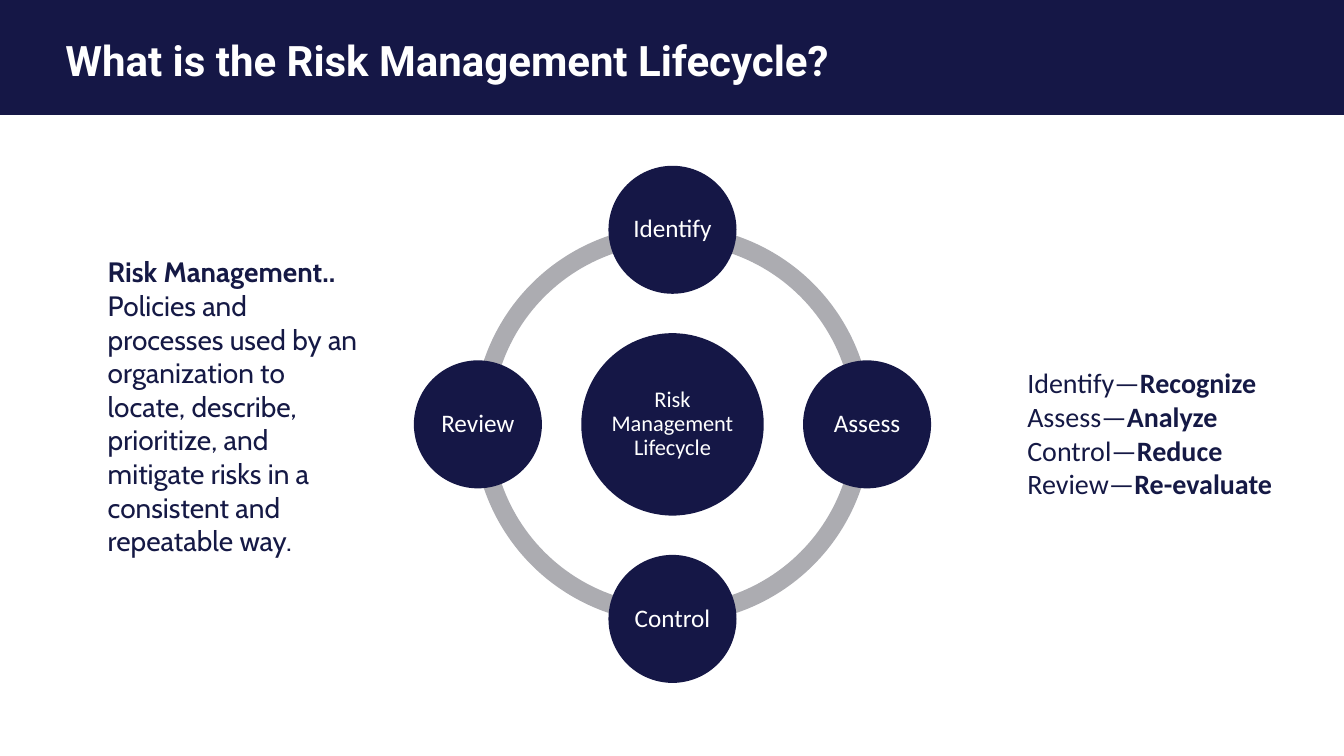
from dataclasses import dataclass
from math import cos, radians, sin

from pptx import Presentation
from pptx.dml.color import RGBColor
from pptx.enum.shapes import MSO_SHAPE
from pptx.enum.text import MSO_ANCHOR, PP_ALIGN
from pptx.util import Inches, Pt

RECTANGLE, OVAL, ARC = MSO_SHAPE.RECTANGLE, MSO_SHAPE.OVAL, MSO_SHAPE.BLOCK_ARC
MIDDLE, TOP = MSO_ANCHOR.MIDDLE, MSO_ANCHOR.TOP
LEFT, CENTER = PP_ALIGN.LEFT, PP_ALIGN.CENTER


@dataclass(frozen=True)
class Theme:
    navy: str = "151746"
    ink: str = "151945"
    gray: str = "ACACB1"
    white: str = "FFFFFF"
    title_size: int = 30
    body_size: int = 20
    step_size: int = 18
    hub_size: int = 16


theme = Theme()
deck = Presentation()
deck.slide_width, deck.slide_height = Inches(13.33), Inches(7.5)
page = deck.slides.add_slide(deck.slide_layouts[6])


def add_block(kind, left, top, width, height, color):
    block = page.shapes.add_shape(
        kind, Inches(left), Inches(top), Inches(width), Inches(height))
    block.shadow.inherit = False
    block.fill.solid()
    block.fill.fore_color.rgb = RGBColor.from_string(color)
    block.line.fill.background()
    return block


def write(box, paragraphs, *, font, size, color, align=LEFT, anchor=TOP,
          spacing=1.0, inset=None):
    """Fill a box; each paragraph is a list of (text, bold) spans."""
    frame = box.text_frame
    frame.word_wrap = True
    frame.vertical_anchor = anchor
    if inset is not None:
        frame.margin_left = frame.margin_right = Inches(inset)
        frame.margin_top = frame.margin_bottom = Inches(inset)
    for index, spans in enumerate(paragraphs):
        para = frame.add_paragraph() if index else frame.paragraphs[0]
        para.alignment = align
        para.line_spacing = spacing
        for text, bold in spans:
            span = para.add_run()
            span.text = text
            span.font.name = font
            span.font.size = Pt(size)
            span.font.bold = bold
            span.font.color.rgb = RGBColor.from_string(color)


# Title band
add_block(RECTANGLE, 0, 0, 13.33, 1.14, theme.navy)
title = page.shapes.add_textbox(Inches(0.55), Inches(0.05), Inches(12.22), Inches(1.14))
write(title, [[("What is the Risk Management Lifecycle?", True)]], font="Roboto",
      size=theme.title_size, color=theme.white, anchor=MIDDLE, spacing=0.9)

# Ring of four quarter arcs (216 angle units make a full turn)
center_x, center_y = 6.67, 4.21
ring, quarter = 3.95, 54
for start in (108, 54, 0, 162):
    arc = add_block(ARC, center_x - ring / 2, center_y - ring / 2, ring, ring, theme.gray)
    arc.adjustments[0] = start
    arc.adjustments[1] = (start + quarter) % 216
    arc.adjustments[2] = 0.046

# Hub
hub_width = 1.81
hub = add_block(OVAL, center_x - hub_width / 2, center_y - hub_width / 2,
                hub_width, hub_width, theme.navy)
write(hub, [[("Risk Management Lifecycle", False)]], font="Calibri", size=theme.hub_size,
      color=theme.white, align=CENTER, anchor=MIDDLE, spacing=0.9, inset=0.02)

# Steps, clockwise from the top
step_width, orbit = 1.27, 1.93
for index, name in enumerate(("Identify", "Assess", "Control", "Review")):
    angle = radians(90 * index - 90)
    step = add_block(OVAL, center_x + orbit * cos(angle) - step_width / 2,
                     center_y + orbit * sin(angle) - step_width / 2,
                     step_width, step_width, theme.navy)
    write(step, [[(name, False)]], font="Calibri", size=theme.step_size,
          color=theme.white, align=CENTER, anchor=MIDDLE, spacing=0.9, inset=0.03)

# Definition on the left
definition = page.shapes.add_textbox(Inches(0.97), Inches(2.48), Inches(2.69), Inches(3.13))
write(definition, [[
    ("Risk Management..", True),
    (" Policies and processes used by an organization to locate, describe, "
     "prioritize, and mitigate risks in a consistent and repeatable way.", False),
]], font="Cabin", size=theme.body_size, color=theme.ink)

# Meaning of each step on the right
meanings = page.shapes.add_textbox(Inches(10.09), Inches(3.58), Inches(2.69), Inches(1.45))
write(meanings, [
    [("Identify—", False), ("Recognize", True)],
    [("Assess—", False), ("Analyze", True), (" Control—", False), ("Reduce", True)],
    [("Review—", False), ("Re-evaluate", True)],
], font="Calibri", size=theme.body_size, color=theme.ink)

deck.save("out.pptx")
